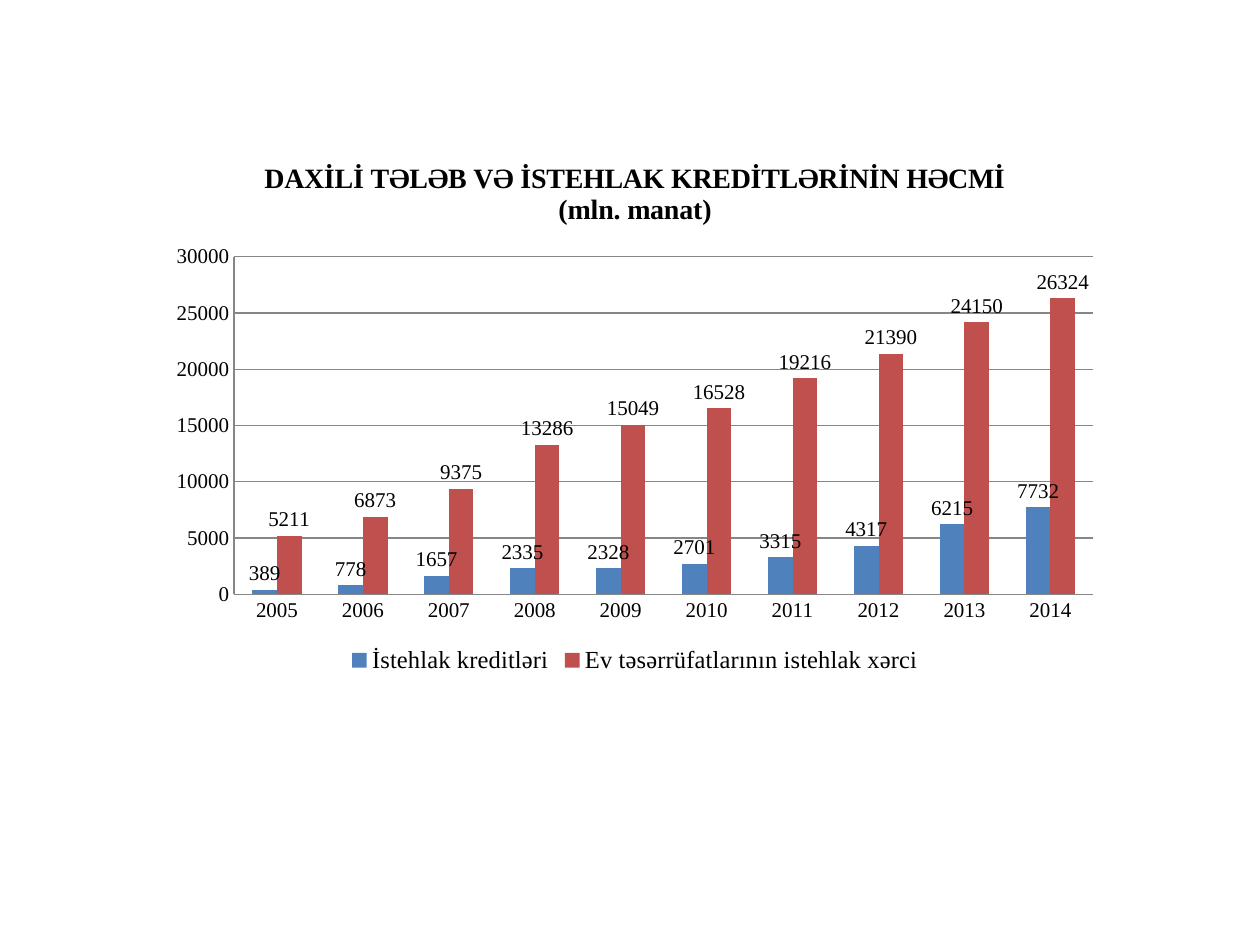
from dataclasses import dataclass

from pptx import Presentation
from pptx.chart.chart import Chart
from pptx.chart.data import CategoryChartData
from pptx.chart.series import BarSeries
from pptx.dml.color import RGBColor
from pptx.enum.chart import XL_CHART_TYPE as ChartType
from pptx.enum.chart import XL_LABEL_POSITION as LabelPosition
from pptx.enum.chart import XL_LEGEND_POSITION as LegendPosition
from pptx.enum.chart import XL_TICK_MARK as TickMark
from pptx.util import Pt

BLACK = RGBColor(0x00, 0x00, 0x00)
GRAY = RGBColor(0x86, 0x86, 0x86)
BLUE = RGBColor(0x4F, 0x81, 0xBD)
RED = RGBColor(0xC0, 0x50, 0x4D)
FONT = "Times New Roman"
TITLE = "DAXİLİ TƏLƏB VƏ İSTEHLAK KREDİTLƏRİNİN HƏCMİ (mln. manat)"
YEARS = [str(year) for year in range(2005, 2015)]


@dataclass(frozen=True)
class Measure:
    name: str
    color: RGBColor
    values: tuple[int, ...]


MEASURES = (
    Measure("İstehlak kreditləri", BLUE,
            (389, 778, 1657, 2335, 2328, 2701, 3315, 4317, 6215, 7732)),
    Measure("Ev təsərrüfatlarının istehlak xərci", RED,
            (5211, 6873, 9375, 13286, 15049, 16528, 19216, 21390, 24150, 26324)),
)


def style_font(font, size: float, bold: bool = False) -> None:
    font.name = FONT
    font.size = Pt(size)
    font.bold = bold
    font.color.rgb = BLACK


def style_series(series: BarSeries, color: RGBColor) -> None:
    series.format.fill.solid()
    series.format.fill.fore_color.rgb = color
    series.invert_if_negative = False
    labels = series.data_labels
    labels.show_value = True
    labels.position = LabelPosition.OUTSIDE_END
    style_font(labels.font, 12)


def style_axes(chart: Chart) -> None:
    for axis in (chart.category_axis, chart.value_axis):
        axis.major_tick_mark = TickMark.NONE
        axis.minor_tick_mark = TickMark.NONE
        axis.format.line.color.rgb = GRAY
        style_font(axis.tick_labels.font, 12)
    value_axis = chart.value_axis
    value_axis.minimum_scale = 0
    value_axis.maximum_scale = 30000
    value_axis.major_unit = 5000
    value_axis.has_major_gridlines = True
    value_axis.major_gridlines.format.line.color.rgb = GRAY
    value_axis.tick_labels.number_format = "0"
    value_axis.tick_labels.number_format_is_linked = False


def add_credit_chart(slide) -> None:
    data = CategoryChartData(number_format="0")
    data.categories = YEARS
    for measure in MEASURES:
        data.add_series(measure.name, measure.values)
    chart = slide.shapes.add_chart(
        ChartType.COLUMN_CLUSTERED, Pt(90), Pt(78.5), Pt(545.75), Pt(309.6), data
    ).chart
    style_font(chart.font, 12)

    # Title
    chart.has_title = True
    paragraph = chart.chart_title.text_frame.paragraphs[0]
    paragraph.text = TITLE
    style_font(paragraph.font, 16, bold=True)
    chart.chart_title.include_in_layout = False

    # Legend
    chart.has_legend = True
    chart.legend.position = LegendPosition.BOTTOM
    chart.legend.include_in_layout = False
    style_font(chart.legend.font, 14)

    # Columns and axes
    plot = chart.plots[0]
    plot.gap_width = 150
    plot.vary_by_categories = False
    for series, measure in zip(plot.series, MEASURES):
        style_series(series, measure.color)
    style_axes(chart)


def main() -> None:
    presentation = Presentation()
    presentation.slide_width = Pt(720)
    presentation.slide_height = Pt(540)
    slide = presentation.slides.add_slide(presentation.slide_layouts[6])
    add_credit_chart(slide)
    presentation.save("out.pptx")


if __name__ == "__main__":
    main()
